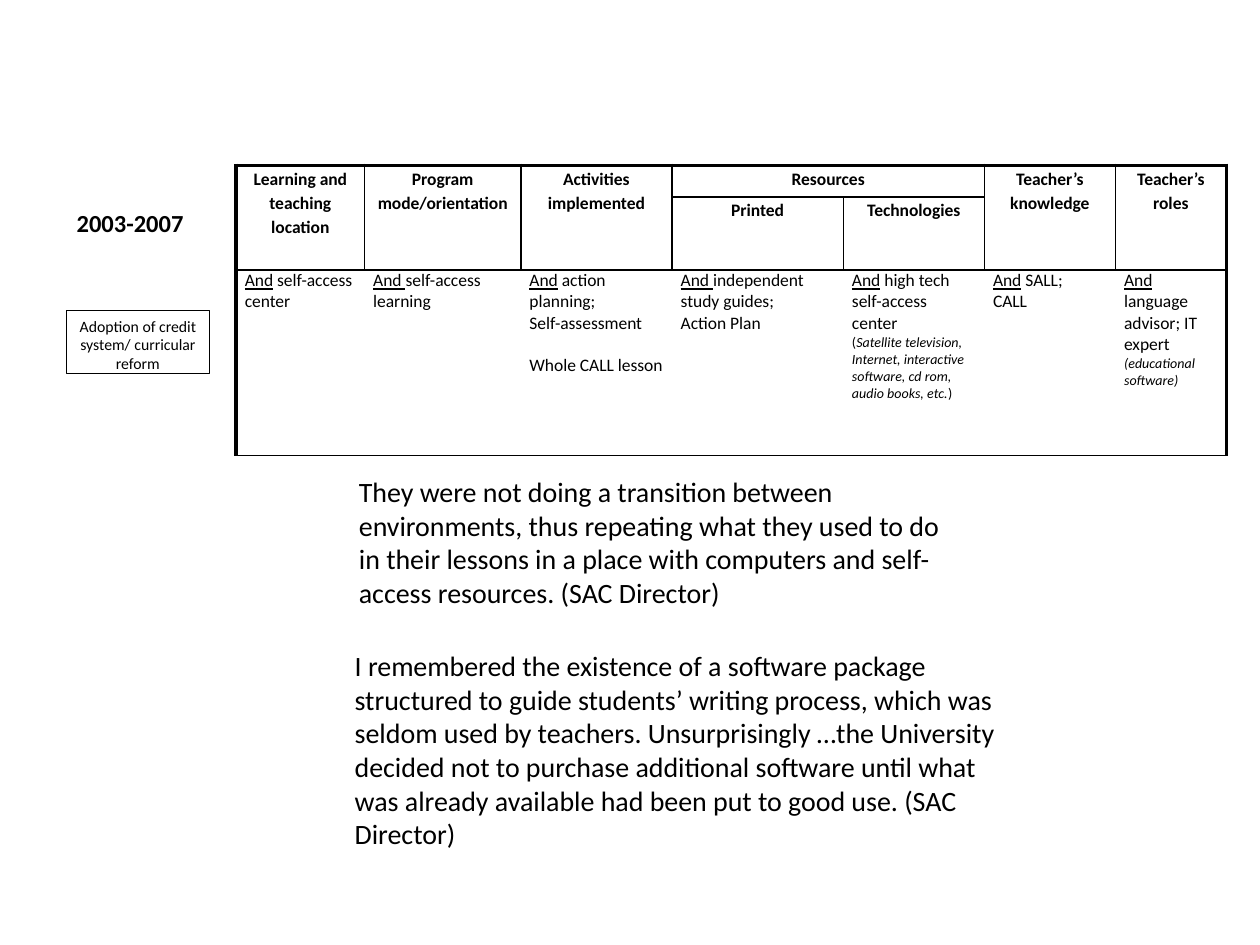
import pptx
import pptx.chart.data
import pptx.dml.color
import pptx.enum.shapes
import pptx.enum.text
import pptx.oxml
import pptx.oxml.ns
import pptx.util

Pt = pptx.util.Pt
ALIGN = pptx.enum.text.PP_ALIGN
BLACK, WHITE = "000000", "FFFFFF"
THIN, THICK = 1, 2.25
COLUMN_WIDTHS = [73.4, 89.3, 86.4, 97.9, 80.6, 74.9, 63.4]
ROW_HEIGHTS = [18, 17.3, 105.8]
NO_GRID_STYLE = "{2D5ABB26-0587-4C30-8999-92F81FD0307C}"

LABEL = {"size": Pt(14), "bold": True}
EVENT = {"size": Pt(9)}
QUOTE = {"size": Pt(16)}
HEADING = {"size": Pt(10), "bold": True}
BODY = {"size": Pt(10)}
ADDED = {"size": Pt(10), "underline": True}
NOTE = {"size": Pt(8)}
EXAMPLE = {"size": Pt(8), "italic": True}

CENTRED = {"alignment": ALIGN.CENTER}
HEADING_LINE = {"alignment": ALIGN.CENTER, "line_spacing": 1.15}
NEW_TOPIC = {"space_before": Pt(12)}

HEADINGS = {
    (0, 0): ["Learning and teaching", "location"],
    (0, 1): ["Program mode/orientation"],
    (0, 2): ["Activities implemented"],
    (0, 3): ["Resources"],
    (0, 5): ["Teacher’s knowledge"],
    (0, 6): ["Teacher’s roles"],
    (1, 3): ["Printed"],
    (1, 4): ["Technologies"],
}
ADDITIONS = [
    [([("And", ADDED), (" self-access center", BODY)], {})],
    [([("And ", ADDED), ("self-access learning", BODY)], {})],
    [([("And", ADDED), (" action planning;", BODY)], {}),
     ([("Self-assessment", BODY)], {}),
     ([("Whole CALL lesson", BODY)], NEW_TOPIC)],
    [([("And ", ADDED), ("independent study guides;", BODY)], {}),
     ([("Action Plan", BODY)], {})],
    [([("And", ADDED), (" high tech", BODY)], {}),
     ([("self-access center", BODY)], {}),
     ([("(", NOTE),
       ("Satellite television, Internet, interactive software, cd rom, audio books, etc.", EXAMPLE),
       (")", NOTE)], {})],
    [([("And", ADDED), (" SALL;", BODY)], {}), ([("CALL", BODY)], {})],
    [([("And ", ADDED), ("language advisor; IT expert ", BODY),
       ("(educational software)", EXAMPLE)], {})],
]
TRANSITION_QUOTE = (
    "They were not doing a transition between environments, thus repeating what they used "
    "to do in their lessons in a place with computers and self-access resources. (SAC Director)"
)
SOFTWARE_QUOTE = (
    "I remembered the existence of a software package structured to guide students’ writing "
    "process, which was seldom used by teachers. Unsurprisingly …the University decided not to "
    "purchase additional software until what was already available had been put to good use. "
    "(SAC Director)"
)


def color(value):
    """Return the colour for a hex string."""
    return pptx.dml.color.RGBColor.from_string(value)


def apply(target, values):
    """Set every attribute named in a dict of format values."""
    for name, value in values.items():
        setattr(target, name, value)


def write(text_frame, paragraphs):
    """Fill a text frame with paragraphs given as (runs, paragraph format)."""
    for index, (runs, layout) in enumerate(paragraphs):
        paragraph = text_frame.add_paragraph() if index else text_frame.paragraphs[0]
        apply(paragraph, layout)
        for text, style in runs:
            run = paragraph.add_run()
            run.text = text
            apply(run.font, {"name": "Calibri", **style})
            run.font.color.rgb = color(BLACK)


def set_borders(cell, widths):
    """Draw solid borders on the sides of a cell named in widths."""
    properties = cell._tc.get_or_add_tcPr()
    for side in "LRTB":
        if side in widths:
            properties.append(pptx.oxml.parse_xml(
                f'<a:ln{side} {pptx.oxml.ns.nsdecls("a")} w="{int(Pt(widths[side]))}">'
                f'<a:solidFill><a:srgbClr val="{BLACK}"/></a:solidFill></a:ln{side}>'))


def border_widths(row, column):
    """Return border widths: a ruled header, an open body and a thick frame."""
    last = len(COLUMN_WIDTHS) - 1
    widths = {"T": THIN if row else THICK, "B": THIN}
    if row < 2 or column == 0:
        widths["L"] = THIN if column else THICK
    if row < 2 or column == last:
        widths["R"] = THICK if column == last else THIN
    return widths


def add_practice_table(slide, left, top):
    """Place the table of practices with its two-level header."""
    frame = slide.shapes.add_table(
        len(ROW_HEIGHTS), len(COLUMN_WIDTHS), Pt(left), Pt(top),
        Pt(sum(COLUMN_WIDTHS)), Pt(sum(ROW_HEIGHTS)))
    table = frame.table
    apply(table, {"first_row": False, "horz_banding": False})
    table._tbl.tblPr.find(pptx.oxml.ns.qn("a:tableStyleId")).text = NO_GRID_STYLE
    for column, width in zip(table.columns, COLUMN_WIDTHS):
        column.width = Pt(width)
    for row, height in zip(table.rows, ROW_HEIGHTS):
        row.height = Pt(height)

    contents = {place: [([(line, HEADING)], HEADING_LINE) for line in lines]
                for place, lines in HEADINGS.items()}
    contents.update({(2, column): text for column, text in enumerate(ADDITIONS)})
    for row in range(len(ROW_HEIGHTS)):
        for column in range(len(COLUMN_WIDTHS)):
            cell = table.cell(row, column)
            apply(cell, {"margin_left": Pt(5), "margin_right": Pt(5),
                         "margin_top": 0, "margin_bottom": 0})
            set_borders(cell, border_widths(row, column))
            cell.fill.background()
            write(cell.text_frame, contents.get((row, column), []))
    for column in (0, 1, 2, 5, 6):
        table.cell(0, column).merge(table.cell(1, column))
    table.cell(0, 3).merge(table.cell(0, 4))


def add_text(shapes, left, top, width, height, text, style):
    """Place a text box that grows with its text."""
    box = shapes.add_textbox(Pt(left), Pt(top), Pt(width), Pt(height))
    apply(box.text_frame, {"word_wrap": True,
                           "auto_size": pptx.enum.text.MSO_AUTO_SIZE.SHAPE_TO_FIT_TEXT})
    write(box.text_frame, [([(text, style)], {})])


def add_period(slide, left, top):
    """Place the grouped period label and the event box below it."""
    shapes = slide.shapes.add_group_shape().shapes
    add_text(shapes, left, top, 79.2, 24.5, "2003-2007", LABEL)
    event = shapes.add_shape(pptx.enum.shapes.MSO_SHAPE.RECTANGLE,
                             Pt(left + 1.4), Pt(top + 62), Pt(81.4), Pt(36))
    event.shadow.inherit = False
    event.fill.solid()
    event.fill.fore_color.rgb = color(WHITE)
    event.line.color.rgb = color(BLACK)
    event.line.width = Pt(0.5)
    apply(event.text_frame, {"word_wrap": True,
                             "vertical_anchor": pptx.enum.text.MSO_ANCHOR.TOP})
    write(event.text_frame,
          [([("Adoption of credit system/ curricular reform", EVENT)], CENTRED)])


def main():
    """Build the slide and save it."""
    presentation = pptx.Presentation()
    apply(presentation, {"slide_width": Pt(720), "slide_height": Pt(540)})
    slide = presentation.slides.add_slide(presentation.slide_layouts[6])
    add_practice_table(slide, 134.9, 94.5)
    add_period(slide, 36.7, 115.2)
    add_text(slide.shapes, 198, 267.8, 354.2, 85, TRANSITION_QUOTE, QUOTE)
    add_text(slide.shapes, 195.6, 367.2, 383, 123.8, SOFTWARE_QUOTE, QUOTE)
    presentation.save("out.pptx")


if __name__ == "__main__":
    main()
